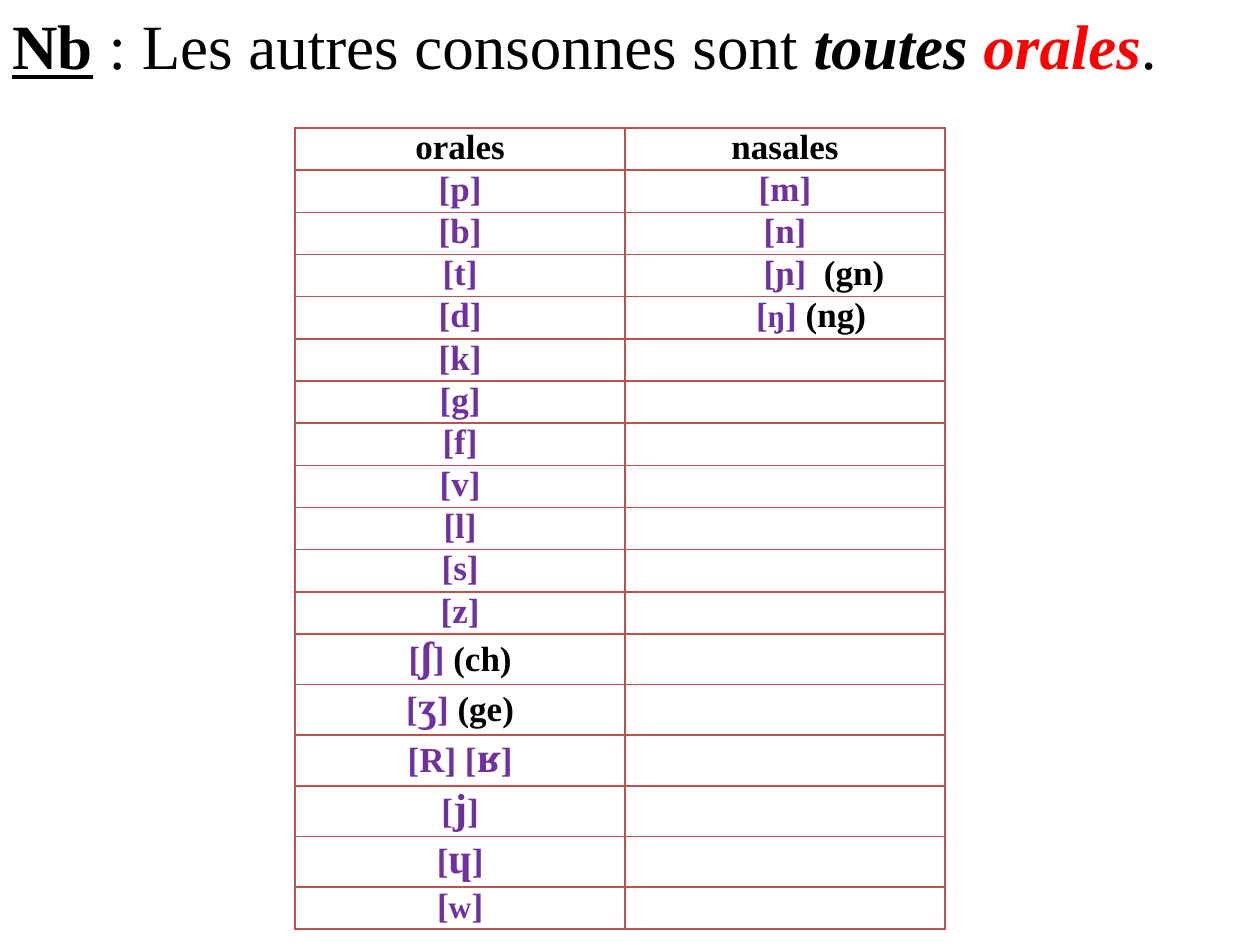
from lxml import etree
from pptx import Presentation
from pptx.dml.color import RGBColor
from pptx.enum import text
from pptx.oxml.ns import qn
from pptx.util import Cm, Pt

BLACK = RGBColor(0x00, 0x00, 0x00)
RED = RGBColor(0xFF, 0x00, 0x00)
PURPLE = RGBColor(0x70, 0x30, 0xA0)
BORDER = RGBColor(0xC0, 0x50, 0x4D)
FONT = "Times New Roman"

ROW, TALL_ROW = Cm(0.85), Cm(1.02)
COLUMNS = Cm(6.65), Cm(6.45)


def add_run(p, content, size, color=BLACK, bold=True, italic=False,
            underline=False, spacing=0):
    r = p.add_run()
    r.text = content
    font = r.font
    font.name, font.size, font.color.rgb = FONT, Pt(size), color
    font.bold, font.italic, font.underline = bold, italic, underline
    if spacing:
        r._r.get_or_add_rPr().set("spc", str(round(spacing * 100)))


def add_title(slide):
    sp = slide.shapes.add_textbox(0, 0, Cm(23.8), Cm(1.8))
    tf = sp.text_frame
    tf.word_wrap = False
    tf.auto_size = text.MSO_AUTO_SIZE.SHAPE_TO_FIT_TEXT
    tf.vertical_anchor = text.MSO_ANCHOR.MIDDLE
    p = tf.paragraphs[0]
    add_run(p, "Nb", 36, underline=True)
    add_run(p, " : Les autres consonnes sont ", 36, bold=False)
    add_run(p, "toutes ", 36, italic=True)
    add_run(p, "orales", 36, RED, italic=True)
    add_run(p, ".", 36, bold=False)


def style_cell(cell):
    cell.margin_left = cell.margin_right = Cm(0.18)
    cell.margin_top = cell.margin_bottom = 0
    tcPr = cell._tc.get_or_add_tcPr()
    for side in ("lnL", "lnR", "lnT", "lnB"):
        ln = etree.SubElement(tcPr, qn("a:" + side), w=str(Pt(1)))
        fill = etree.SubElement(ln, qn("a:solidFill"))
        etree.SubElement(fill, qn("a:srgbClr"), val=str(BORDER))
    cell.fill.background()


def write_cell(cell, runs, indent=0):
    p = cell.text_frame.paragraphs[0]
    p.alignment = text.PP_ALIGN.CENTER
    if indent:
        p._p.get_or_add_pPr().set("marL", str(Cm(indent)))
    for content, options in runs:
        add_run(p, content, **{"size": 20, "color": PURPLE, **options})


def header(word):
    return [(word, {"color": BLACK})]


def sound(symbol, spelling="", size=20, before="[", gap=0):
    """Runs for a phonetic symbol in brackets, then its usual spelling."""
    if size == 20:
        runs = [(before + symbol + "]", {})]
    else:
        spacing = -0.3 if size > 20 else 0
        runs = [(before, {}), (symbol, {"size": size, "spacing": spacing}),
                ("]", {})]
    if spelling:
        runs += [(" ", {"spacing": gap}), (spelling, {"color": BLACK})]
    return runs


def add_consonants(slide):
    # Oral consonants: plain symbols, then the enlarged ones in taller rows
    plain = [sound(s) for s in "pbtdkgfvlsz"]
    tall = [sound("ʃ", "(ch)", 24), sound("ʒ", "(ge)", 24),
            sound("ʁ", size=24, before="[R] ["),
            sound("j", size=24), sound("ɥ", size=24)]
    orals = [header("orales"), *plain, *tall, sound("w", size=18)]

    # Nasal consonants, each with its left indent in cm
    nasals = [(header("nasales"), 0), (sound("m"), 0), (sound("n"), 0),
              (sound("ɲ", "(gn)", gap=5), 1.57),
              (sound("ŋ", "(ng)", 18), 1.05)]

    # Grid
    heights = [TALL_ROW if runs in tall else ROW for runs in orals]
    frame = slide.shapes.add_table(len(orals), 2, Cm(5.95), Cm(2.58),
                                   sum(COLUMNS), sum(heights))
    table = frame.table
    table.first_row = table.horz_banding = False
    for column, width in zip(table.columns, COLUMNS):
        column.width = width
    for row, height in zip(table.rows, heights):
        row.height = height
    for cell in table.iter_cells():
        style_cell(cell)

    # Contents
    for i, runs in enumerate(orals):
        write_cell(table.cell(i, 0), runs)
    for i, (runs, indent) in enumerate(nasals):
        write_cell(table.cell(i, 1), runs, indent)


def main():
    prs = Presentation()
    prs.slide_width, prs.slide_height = Cm(25.4), Cm(19.05)
    slide = prs.slides.add_slide(prs.slide_layouts[6])
    add_title(slide)
    add_consonants(slide)
    prs.save("out.pptx")


if __name__ == "__main__":
    main()
